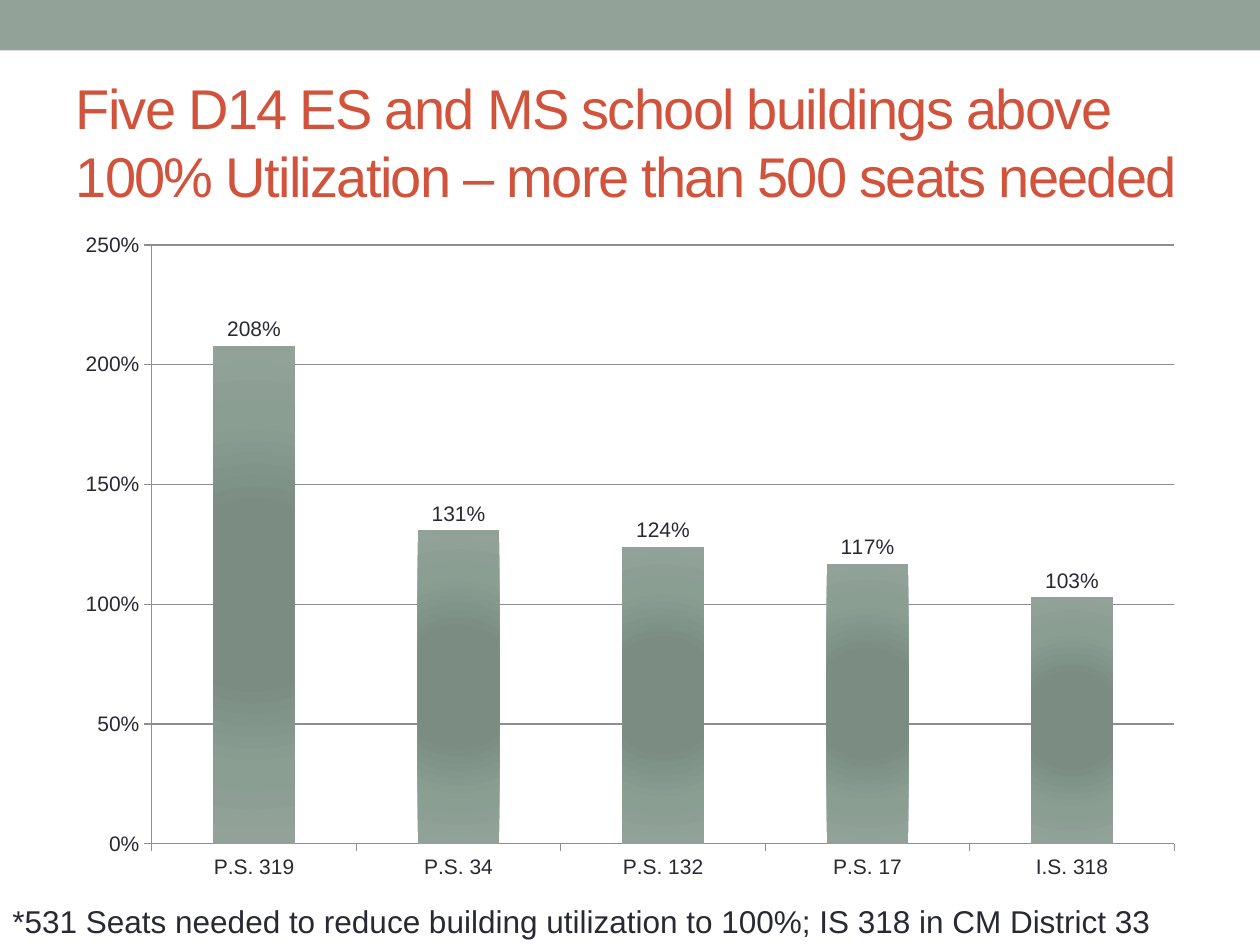
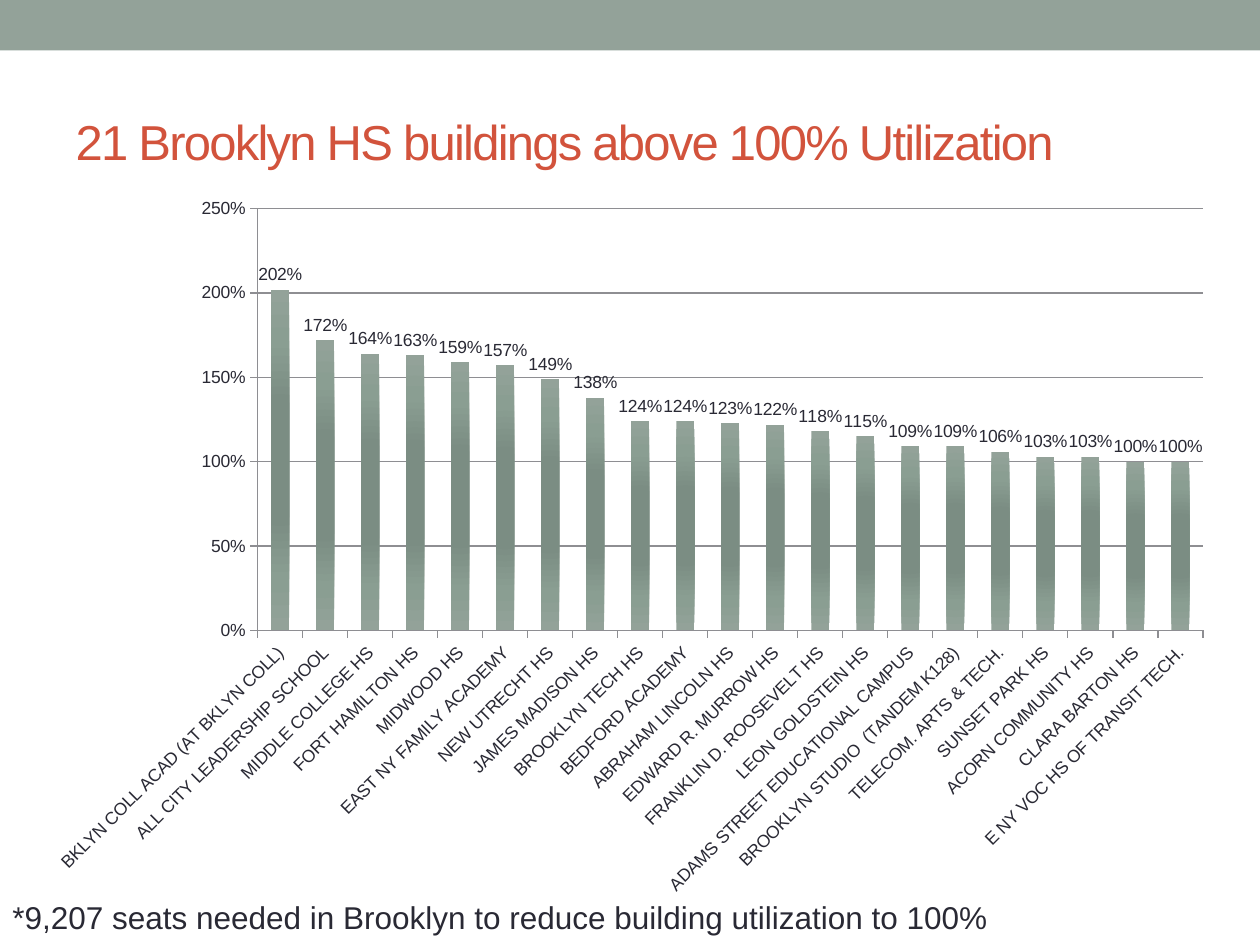
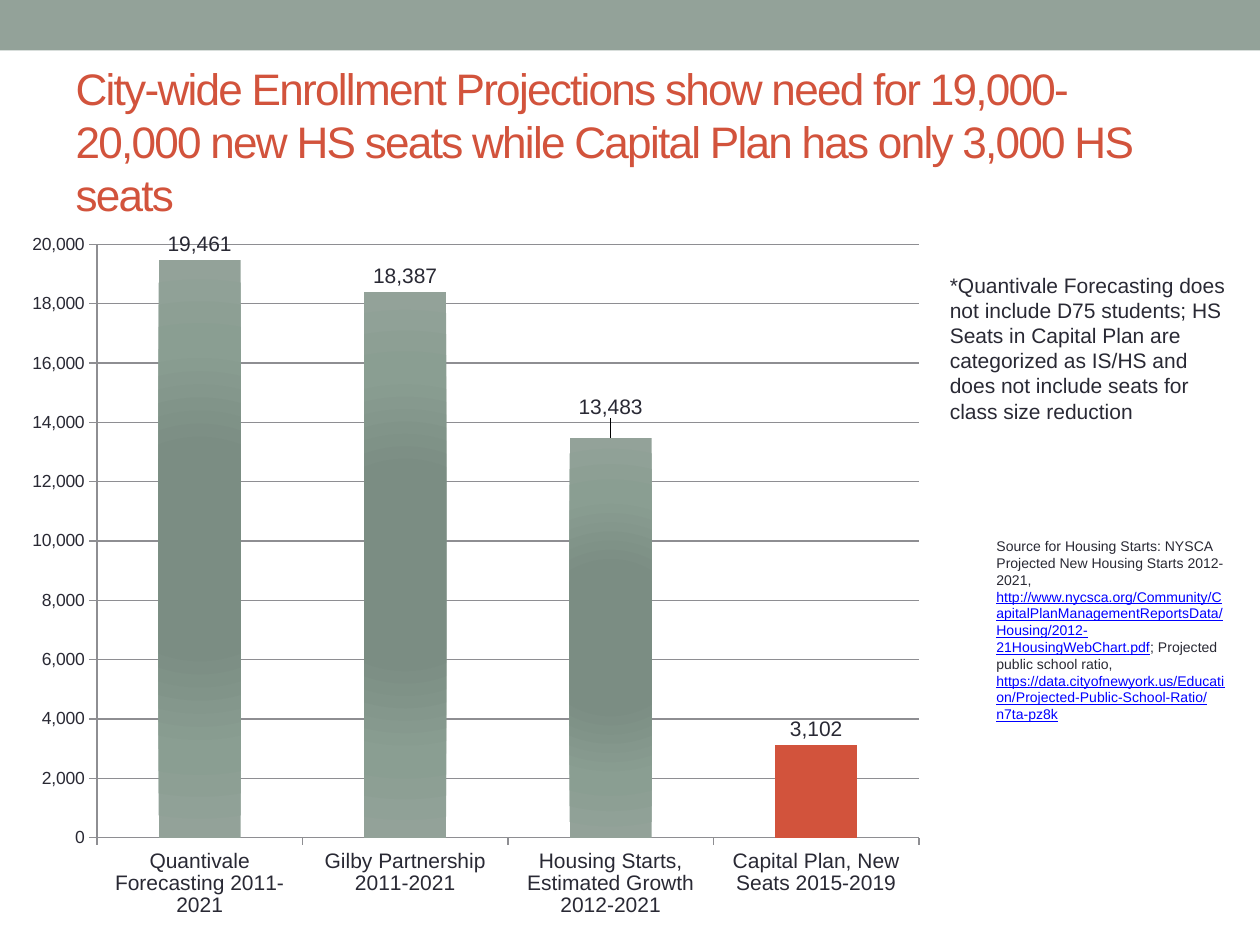
"""Build three slides on school building utilization and projected seat needs."""
from dataclasses import dataclass

from pptx import Presentation
from pptx.chart.data import CategoryChartData
from pptx.dml.color import RGBColor
from pptx.enum.chart import XL_CHART_TYPE as ChartType
from pptx.enum.chart import XL_LABEL_POSITION as LabelPosition
from pptx.enum.chart import XL_TICK_MARK as TickMark
from pptx.enum.shapes import MSO_SHAPE as Shape
from pptx.enum.text import MSO_ANCHOR as Anchor
from pptx.enum.text import MSO_AUTO_SIZE as AutoSize
from pptx.enum.text import PP_ALIGN as Align
from pptx.oxml import parse_xml
from pptx.oxml.ns import nsdecls
from pptx.util import Pt


@dataclass(frozen=True)
class Theme:
    font: str = "Arial"
    sage: RGBColor = RGBColor(0x93, 0xA2, 0x99)
    rust: RGBColor = RGBColor(0xD2, 0x53, 0x3C)
    ink: RGBColor = RGBColor(0x29, 0x29, 0x34)
    link: RGBColor = RGBColor(0x00, 0x00, 0xFF)
    grid: RGBColor = RGBColor(0x8E, 0x8E, 0x92)
    bar_stops: tuple = ((0, "7B8E82"), (34, "7B8D83"), (70, "8A9E92"), (100, "93A299"))
    footnote: float = 18
    note: float = 12
    source: float = 8
    chart_large: float = 12
    chart_small: float = 10


theme = Theme()


def add_run(paragraph, text, size, color):
    run = paragraph.add_run()
    run.text = text
    run.font.name = theme.font
    run.font.size = Pt(size)
    run.font.color.rgb = color
    return run


def manual_layout(target="", **fractions):
    target_xml = f'<c:layoutTarget val="{target}"/>' if target else ""
    modes = '<c:xMode val="edge"/><c:yMode val="edge"/>' if target else ""
    values = "".join(f'<c:{name} val="{value}"/>' for name, value in fractions.items())
    return parse_xml(f'<c:layout {nsdecls("c")}><c:manualLayout>{target_xml}{modes}{values}'
                     '</c:manualLayout></c:layout>')


district_schools = {"P.S. 319": 2.08, "P.S. 34": 1.31, "P.S. 132": 1.24, "P.S. 17": 1.17,
                    "I.S. 318": 1.03}
brooklyn_schools = {
    "BKLYN COLL ACAD (AT BKLYN COLL)": 2.02,
    "ALL CITY LEADERSHIP SCHOOL": 1.72,
    "MIDDLE COLLEGE HS": 1.64,
    "FORT HAMILTON HS": 1.63,
    "MIDWOOD HS": 1.59,
    "EAST NY FAMILY ACADEMY": 1.57,
    "NEW UTRECHT HS": 1.49,
    "JAMES MADISON HS": 1.38,
    "BROOKLYN TECH HS": 1.24,
    "BEDFORD ACADEMY": 1.24,
    "ABRAHAM LINCOLN HS": 1.23,
    "EDWARD R. MURROW HS": 1.22,
    "FRANKLIN D. ROOSEVELT HS": 1.18,
    "LEON GOLDSTEIN HS": 1.15,
    "ADAMS STREET EDUCATIONAL CAMPUS": 1.09,
    "BROOKLYN STUDIO  (TANDEM K128)": 1.09,
    "TELECOM. ARTS & TECH.": 1.06,
    "SUNSET PARK HS": 1.03,
    "ACORN COMMUNITY HS": 1.03,
    "CLARA BARTON HS": 1,
    "E NY VOC HS OF TRANSIT TECH.": 1,
}
seat_projections = {
    "Quantivale Forecasting 2011-2021": 19461,
    "Gilby Partnership 2011-2021": 18387,
    "Housing Starts, Estimated Growth 2012-2021": 13483,
    "Capital Plan, New Seats 2015-2019": 3102,
}

large, small = theme.chart_large, theme.chart_small
slide_contents = [
    dict(title="Five D14 ES and MS school buildings above 100% Utilization – "
               "more than 500 seats needed",
         title_size=32, data=district_schools, frame=(36, 126, 648, 383.76),
         category_size=large, value_size=large, label_size=large,
         number_format="0%", maximum=2.5, step=0.5),
    dict(title="21 Brooklyn HS buildings above 100% Utilization",
         title_size=28, data=brooklyn_schools, frame=(-58.32, 110.16, 750.24, 429.12),
         category_size=small, value_size=small, label_size=small,
         number_format="0%", maximum=2.5, step=0.5),
    dict(title="City-wide Enrollment Projections show need for 19,000-20,000 new HS seats "
               "while Capital Plan has only 3,000 HS seats",
         title_size=25.2, data=seat_projections, frame=(7.92, 126, 527.76, 406.08),
         category_size=large, value_size=small, label_size=large,
         number_format="#,##0", maximum=20000, step=2000),
]

presentation = Presentation()
presentation.slide_width, presentation.slide_height = Pt(720), Pt(540)
title_layout = presentation.slide_layouts[5]
stops = "".join(f'<a:gs pos="{position * 1000}"><a:srgbClr val="{color}"/></a:gs>'
                for position, color in theme.bar_stops)
center = " ".join(f'{side}="100000"' for side in "ltrb")
slides, charts = [], []

for content in slide_contents:
    slide = presentation.slides.add_slide(title_layout)
    slides.append(slide)

    title = slide.shapes.title
    title.left, title.top, title.width, title.height = Pt(36), Pt(41.76), Pt(648), Pt(77.76)
    title.text_frame.word_wrap = True
    title.text_frame.auto_size = AutoSize.NONE
    title.text_frame.vertical_anchor = Anchor.MIDDLE
    title_paragraph = title.text_frame.paragraphs[0]
    title_paragraph.alignment = Align.LEFT
    title_run = add_run(title_paragraph, content["title"], content["title_size"], theme.rust)
    title_run.font._element.set("spc", "-100")

    chart_data = CategoryChartData(number_format=content["number_format"])
    chart_data.categories = content["data"].keys()
    chart_data.add_series("Series 1", content["data"].values())
    frame = [Pt(length) for length in content["frame"]]
    chart = slide.shapes.add_chart(ChartType.COLUMN_CLUSTERED, *frame, chart_data).chart
    charts.append(chart)
    chart.has_title = False
    chart.has_legend = False
    chart.font.name = theme.font
    chart.font.size = Pt(theme.chart_small)
    chart.font.color.rgb = theme.ink

    category_axis, value_axis = chart.category_axis, chart.value_axis
    for axis, size in ((category_axis, content["category_size"]),
                       (value_axis, content["value_size"])):
        axis.major_tick_mark = TickMark.OUTSIDE
        axis.minor_tick_mark = TickMark.NONE
        axis.format.line.color.rgb = theme.grid
        axis.format.line.width = Pt(0.75)
        axis.tick_labels.font.size = Pt(size)
    value_axis.minimum_scale = 0
    value_axis.maximum_scale = content["maximum"]
    value_axis.major_unit = content["step"]
    value_axis.tick_labels.number_format = content["number_format"]
    value_axis.tick_labels.number_format_is_linked = False
    value_axis.major_gridlines.format.line.color.rgb = theme.grid
    value_axis.major_gridlines.format.line.width = Pt(0.75)

    plot = chart.plots[0]
    plot.gap_width = 150
    plot.vary_by_categories = False
    series = plot.series[0]
    series._element.get_or_add_spPr().insert(0, parse_xml(
        f'<a:gradFill {nsdecls("a")}><a:gsLst>{stops}</a:gsLst>'
        f'<a:path path="circle"><a:fillToRect {center}/></a:path></a:gradFill>'))
    labels = series.data_labels
    labels.show_value = True
    labels.position = LabelPosition.OUTSIDE_END
    labels.number_format = content["number_format"]
    labels.number_format_is_linked = False
    labels.font.size = Pt(content["label_size"])

district_slide, brooklyn_slide, projection_slide = slides
district_chart, brooklyn_chart, projection_chart = charts

band = district_slide.shapes.add_shape(Shape.RECTANGLE, 0, 0, Pt(720), Pt(28.8))
band.shadow.inherit = False
band.fill.solid()
band.fill.fore_color.rgb = theme.sage
band.line.fill.background()
title_layout.shapes.element.insert(2, band.element)

brooklyn_chart.category_axis._element.xpath("c:txPr/a:bodyPr")[0].set("rot", "-2700000")
plot_area = brooklyn_chart.element.xpath("c:chart/c:plotArea")[0]
for old_layout in plot_area.xpath("c:layout"):
    plot_area.remove(old_layout)
plot_area.insert(0, manual_layout("inner", x=0.274, y=0.021, w=0.72, h=0.562))

projection_series = projection_chart.plots[0].series[0]
capital_plan_fill = projection_series.points[3].format.fill
capital_plan_fill.solid()
capital_plan_fill.fore_color.rgb = theme.rust
housing_label = projection_series.points[2].data_label
housing_label.position = LabelPosition.OUTSIDE_END
housing_label.font.size = Pt(theme.chart_large)
housing_label.font.color.rgb = theme.ink
projection_series._element.xpath("c:dLbls/c:dLbl")[0].insert(1, manual_layout(x=0, y=-0.02))

notes = [
    (district_slide, (0, 511.92, 671.04, 28.8), False, theme.footnote,
     [("*531 Seats needed to reduce building utilization to 100%; IS 318 in CM District 33",
       False)]),
    (brooklyn_slide, (0, 509.76, 581.04, 28.8), False, theme.footnote,
     [("*9,207 seats needed in Brooklyn to reduce building utilization to 100%", False)]),
    (projection_slide, (535.68, 151.92, 172.8, 94.32), True, theme.note,
     [("*Quantivale Forecasting does not include D75 students; HS Seats in Capital Plan are "
       "categorized as IS/HS and does not include seats for class size reduction", False)]),
    (projection_slide, (562.32, 303.84, 146.88, 123.84), True, theme.source,
     [("Source for Housing Starts: NYSCA Projected New Housing Starts 2012-2021, ", False),
      ("http://www.nycsca.org/Community/CapitalPlanManagementReportsData/Housing/"
       "2012-21HousingWebChart.pdf", True),
      ("; Projected public school ratio, ", False),
      ("https://data.cityofnewyork.us/Education/Projected-Public-School-Ratio/n7ta-pz8k",
       True)]),
]
for slide, box, wraps, size, pieces in notes:
    text_frame = slide.shapes.add_textbox(*[Pt(length) for length in box]).text_frame
    text_frame.word_wrap = wraps
    text_frame.auto_size = AutoSize.SHAPE_TO_FIT_TEXT
    for text, is_address in pieces:
        run = add_run(text_frame.paragraphs[0], text, size,
                      theme.link if is_address else theme.ink)
        if is_address:
            run.font.underline = True

presentation.save("out.pptx")
